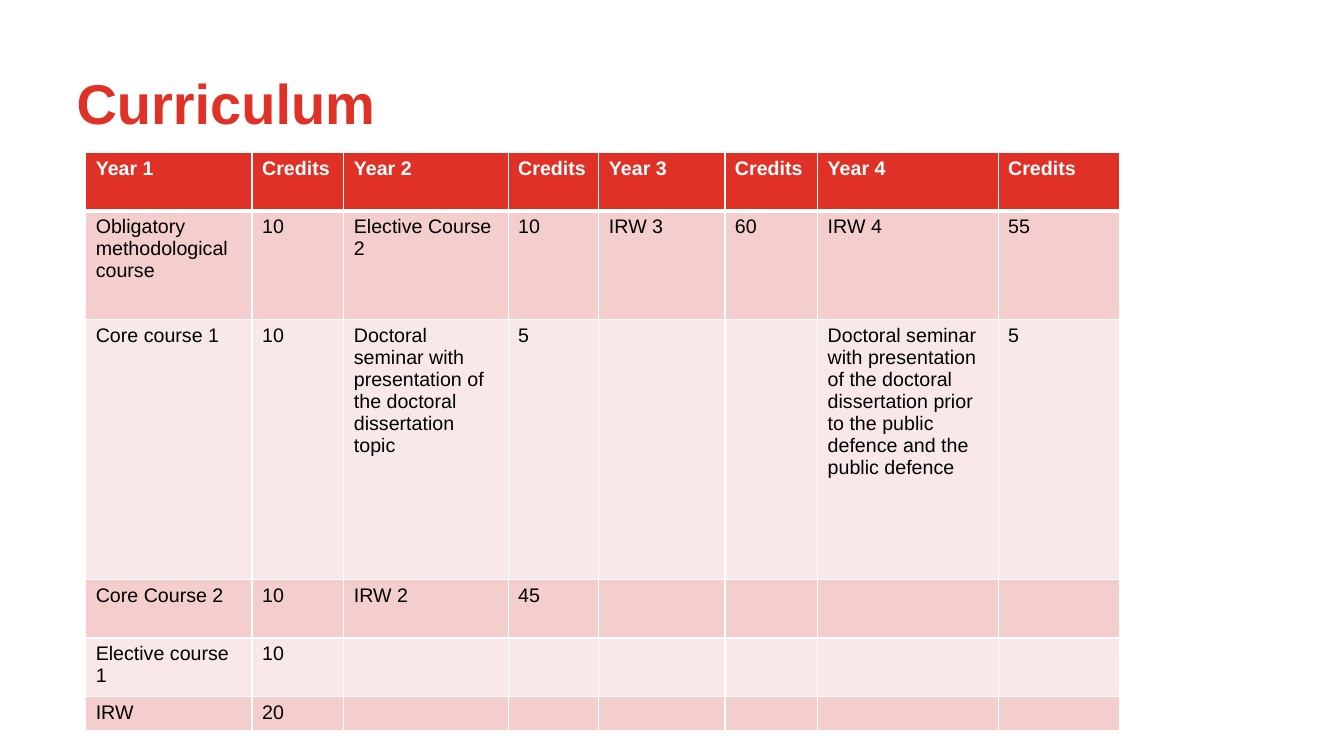
from lxml import etree
from pptx import Presentation, util as u
from pptx.dml.color import RGBColor
from pptx.enum import text
from pptx.oxml import ns

COLORS = {"red": "E03127", "band_dark": "F3CECD", "band_light": "F9E8E8",
          "white": "FFFFFF", "black": "000000"}
FONT = "Arial"
BODY_SIZE = 14
COLUMN_WIDTHS = [1.65, 0.91, 1.63, 0.9, 1.25, 0.92, 1.79, 1.21]
ROW_HEIGHTS = [0.58, 1.08, 2.58, 0.58, 0.58, 0.33]
CURRICULUM = [
    ["Year 1", "Credits", "Year 2", "Credits", "Year 3", "Credits", "Year 4", "Credits"],
    ["Obligatory methodological course", "10", "Elective Course 2", "10",
     "IRW 3", "60", "IRW 4", "55"],
    ["Core course 1", "10",
     "Doctoral seminar with presentation of the doctoral dissertation topic", "5", "", "",
     "Doctoral seminar with presentation of the doctoral dissertation prior to "
     "the public defence and the public defence", "5"],
    ["Core Course 2", "10", "IRW 2", "45"],
    ["Elective course 1", "10"],
    ["IRW", "20"],
]


def write_text(frame, content, size=BODY_SIZE, color="black", bold=False, line_spacing=None):
    paragraph = frame.paragraphs[0]
    if line_spacing:
        paragraph.line_spacing = line_spacing
    if not content:
        etree.SubElement(paragraph._p, ns.qn("a:endParaRPr"), sz=str(size * 100))
        return
    run = paragraph.add_run()
    run.text = content
    run.font.name = FONT
    run.font.size = u.Pt(size)
    run.font.bold = bold
    run.font.color.rgb = RGBColor.from_string(COLORS[color])


def set_borders(cell, top=1, bottom=1):
    properties = cell._tc.get_or_add_tcPr()
    for side, width in {"L": 1, "R": 1, "T": top, "B": bottom}.items():
        line = etree.SubElement(properties, ns.qn(f"a:ln{side}"), w=str(u.Pt(width)))
        fill = etree.SubElement(line, ns.qn("a:solidFill"))
        etree.SubElement(fill, ns.qn("a:srgbClr"), val=COLORS["white"])


def add_title(slide, left, top, width, height):
    box = slide.shapes.add_textbox(*map(u.Inches, (left, top, width, height)))
    frame = box.text_frame
    frame.word_wrap = True
    frame.vertical_anchor = text.MSO_ANCHOR.TOP
    frame.margin_left = frame.margin_right = frame.margin_top = frame.margin_bottom = 0
    write_text(frame, "Curriculum", size=40, color="red", bold=True, line_spacing=0.9)


def add_curriculum_table(slide, left, top, width, height):
    table = slide.shapes.add_table(len(ROW_HEIGHTS), len(COLUMN_WIDTHS),
                                   *map(u.Inches, (left, top, width, height))).table
    for column, share in zip(table.columns, COLUMN_WIDTHS):
        column.width = u.Inches(width * share / sum(COLUMN_WIDTHS))
    for row, share in zip(table.rows, ROW_HEIGHTS):
        row.height = u.Inches(height * share / sum(ROW_HEIGHTS))

    for row_index, entries in enumerate(CURRICULUM):
        header = row_index == 0
        band = "red" if header else "band_dark" if row_index % 2 else "band_light"
        for column_index in range(len(COLUMN_WIDTHS)):
            cell = table.cell(row_index, column_index)
            content = entries[column_index] if column_index < len(entries) else ""
            set_borders(cell, top=3 if row_index == 1 else 1, bottom=3 if header else 1)
            cell.fill.solid()
            cell.fill.fore_color.rgb = RGBColor.from_string(COLORS[band])
            write_text(cell.text_frame, content,
                       color="white" if header else "black", bold=header)


def main():
    presentation = Presentation()
    presentation.slide_width = u.Inches(13.33)
    presentation.slide_height = u.Inches(7.5)
    slide = presentation.slides.add_slide(presentation.slide_layouts[6])
    add_title(slide, 0.76, 0.76, 11.72, 1.12)
    add_curriculum_table(slide, 0.85, 1.51, sum(COLUMN_WIDTHS), sum(ROW_HEIGHTS))
    presentation.save("out.pptx")


if __name__ == "__main__":
    main()
